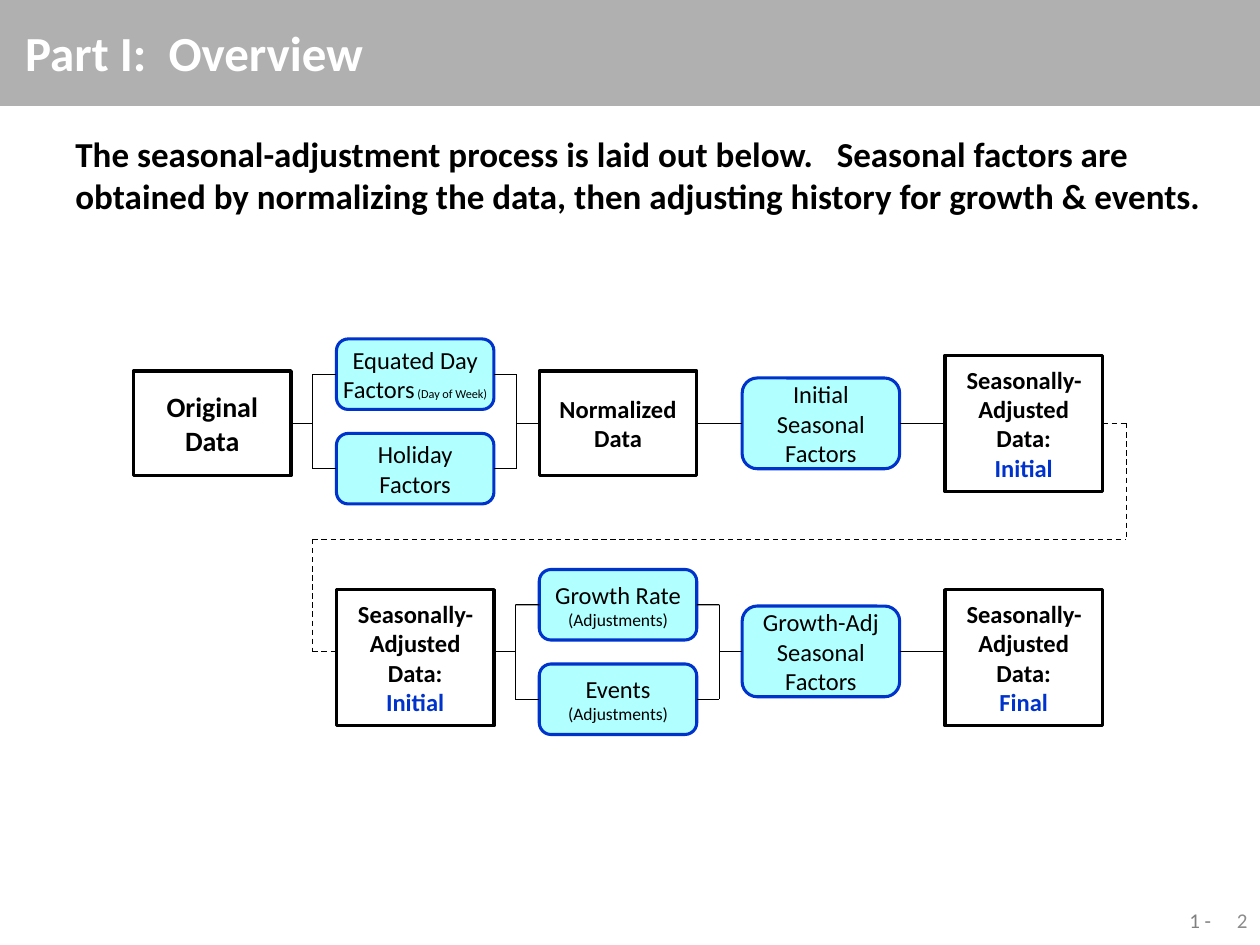
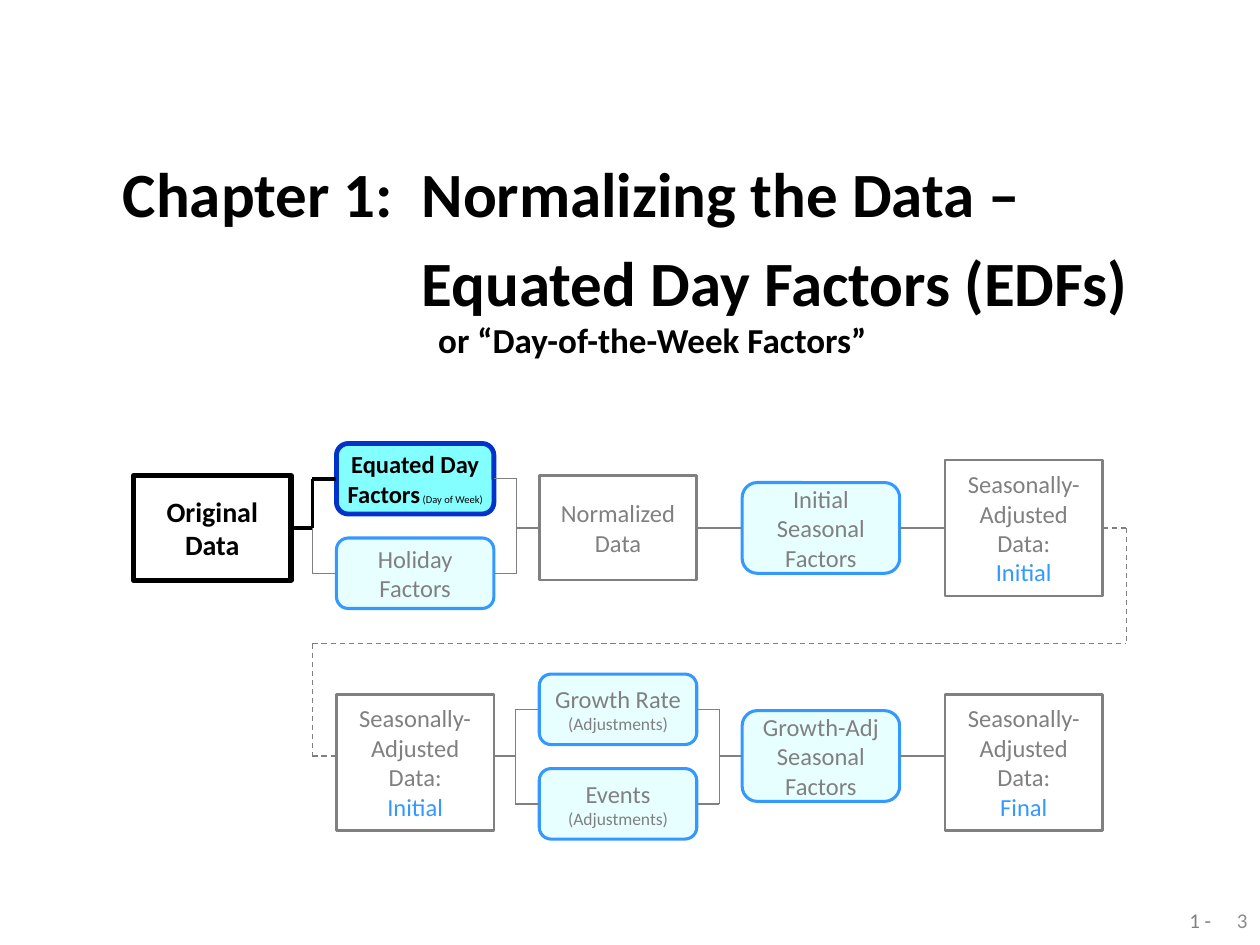
from dataclasses import dataclass
from typing import Union

from lxml.etree import SubElement
from pptx import Presentation
from pptx.dml.color import RGBColor
from pptx.enum.dml import MSO_LINE
from pptx.enum.shapes import MSO_CONNECTOR, MSO_SHAPE
from pptx.enum.text import MSO_ANCHOR, MSO_AUTO_SIZE, PP_ALIGN
from pptx.oxml.ns import qn
from pptx.util import Inches, Pt

COLORS = {
    "band": "969696",
    "white": "FFFFFF",
    "black": "000000",
    "muted": "808080",
    "number": "8C8C8C",
    "factor": "66FFFF",
    "blue": "0033CC",
    "pale_blue": "3399FF",
}
FONT = "Calibri"
TITLE_ONLY = 5
LEFT_SIDE, RIGHT_SIDE = 1, 3

BOX_WIDTH = 1.25
FIRST_COLUMN, COLUMN_STEP = 1.06, 1.61
TOP_ROW, BOTTOM_ROW, RETURN_ROW = 3.36, 5.17, 4.28
FINAL_ROW = 5.22
EQUATED_ROW, HOLIDAY_ROW = 2.97, 3.72
GROWTH_ROW, EVENTS_ROW = 4.8, 5.55
NORMALIZE_FORK, NORMALIZE_JOIN = 2.48, 4.1
ADJUST_FORK, ADJUST_JOIN = 4.09, 5.71
RETURN_EDGE = 8.94

Point = tuple[float, float]
Endpoint = Union[str, Point]


@dataclass(frozen=True)
class Look:
    ink: str
    accent: str
    opacity: int
    data_line: float
    factor_line: float
    wire_line: float
    data_bold: bool
    factor_bold: bool
    note_size: float


PLAIN = Look("black", "blue", 50, 2, 1.75, 0.75, True, False, 7)
FOCUSED = Look("black", "blue", 80, 3, 2.75, 2, True, True, 6)
MUTED = Look("muted", "pale_blue", 15, 1.5, 1.75, 0.75, False, False, 6)


@dataclass(frozen=True)
class Line:
    text: str
    size: float = 14
    accented: bool = False
    note: str = ""


@dataclass(frozen=True)
class Box:
    column: int
    middle: float
    height: float
    lines: tuple[Line, ...]
    factor: bool = False
    inset: float = 0.1
    on_path: bool = False

    @property
    def left(self) -> float:
        return FIRST_COLUMN + COLUMN_STEP * self.column

    @property
    def right(self) -> float:
        return self.left + BOX_WIDTH


@dataclass(frozen=True)
class Wire:
    begin: Endpoint
    end: Endpoint
    dashed: bool = False
    on_path: bool = False


def seasonal_lines(stage: str) -> tuple[Line, ...]:
    return Line("Seasonally-Adjusted Data:"), Line(stage, accented=True)


ADJUSTMENTS = Line("(Adjustments)", 10)
BOXES = {
    "original": Box(0, TOP_ROW, 0.83, (Line("Original Data", 16),), on_path=True),
    "equated": Box(1, EQUATED_ROW, 0.56,
                   (Line("Equated Day Factors", note=" (Day of Week)"),),
                   factor=True, inset=0, on_path=True),
    "holiday": Box(1, HOLIDAY_ROW, 0.56, (Line("Holiday Factors"),), factor=True),
    "normalized": Box(2, TOP_ROW, 0.83, (Line("Normalized Data"),)),
    "seasonal": Box(3, TOP_ROW, 0.72, (Line("Initial Seasonal Factors"),), factor=True),
    "initial": Box(4, TOP_ROW, 1.08, seasonal_lines("Initial")),
    "carried": Box(1, FINAL_ROW, 1.08, seasonal_lines("Initial")),
    "growth": Box(2, GROWTH_ROW, 0.56, (Line("Growth Rate"), ADJUSTMENTS),
                  factor=True, inset=0),
    "events": Box(2, EVENTS_ROW, 0.56, (Line("Events"), ADJUSTMENTS),
                  factor=True, inset=0),
    "growth_adjusted": Box(3, BOTTOM_ROW, 0.72,
                           (Line("Growth-Adj"), Line("Seasonal Factors")), factor=True),
    "final": Box(4, FINAL_ROW, 1.08, seasonal_lines("Final")),
}

WIRES = (
    Wire((NORMALIZE_FORK, TOP_ROW), (NORMALIZE_FORK, HOLIDAY_ROW)),
    Wire((NORMALIZE_FORK, HOLIDAY_ROW), "holiday"),
    Wire("original", (NORMALIZE_FORK, TOP_ROW), on_path=True),
    Wire((NORMALIZE_FORK, EQUATED_ROW), (NORMALIZE_FORK, TOP_ROW), on_path=True),
    Wire((NORMALIZE_FORK, EQUATED_ROW), "equated", on_path=True),
    Wire("equated", (NORMALIZE_JOIN, EQUATED_ROW)),
    Wire("holiday", (NORMALIZE_JOIN, HOLIDAY_ROW)),
    Wire((NORMALIZE_JOIN, EQUATED_ROW), (NORMALIZE_JOIN, HOLIDAY_ROW)),
    Wire((NORMALIZE_JOIN, TOP_ROW), "normalized"),
    Wire("normalized", "seasonal"),
    Wire("seasonal", "initial"),
    Wire("initial", (RETURN_EDGE, TOP_ROW), dashed=True),
    Wire((RETURN_EDGE, TOP_ROW), (RETURN_EDGE, RETURN_ROW), dashed=True),
    Wire((NORMALIZE_FORK, RETURN_ROW), (RETURN_EDGE, RETURN_ROW), dashed=True),
    Wire((NORMALIZE_FORK, RETURN_ROW), (NORMALIZE_FORK, BOTTOM_ROW), dashed=True),
    Wire((NORMALIZE_FORK, BOTTOM_ROW), (BOXES["carried"].left, BOTTOM_ROW), dashed=True),
    Wire((BOXES["carried"].right, BOTTOM_ROW), (ADJUST_FORK, BOTTOM_ROW)),
    Wire((ADJUST_FORK, GROWTH_ROW), (ADJUST_FORK, EVENTS_ROW)),
    Wire((ADJUST_FORK, GROWTH_ROW), "growth"),
    Wire((ADJUST_FORK, EVENTS_ROW), "events"),
    Wire("growth", (ADJUST_JOIN, GROWTH_ROW)),
    Wire("events", (ADJUST_JOIN, EVENTS_ROW)),
    Wire((ADJUST_JOIN, GROWTH_ROW), (ADJUST_JOIN, EVENTS_ROW)),
    Wire((ADJUST_JOIN, BOTTOM_ROW), "growth_adjusted"),
    Wire("growth_adjusted", (BOXES["final"].left, BOTTOM_ROW)),
)


def rgb(color: str) -> RGBColor:
    return RGBColor.from_string(COLORS[color])


def style_paragraph(paragraph, size: float, color: str, bold: bool = False,
                    align=PP_ALIGN.LEFT) -> None:
    paragraph.alignment = align
    font = paragraph.font
    font.name, font.size, font.bold = FONT, Pt(size), bold
    font.color.rgb = rgb(color)


def fill_solid(shape, color: str, opacity: int) -> None:
    shape.fill.solid()
    shape.fill.fore_color.rgb = rgb(color)
    tint = shape.fill._xPr.find(qn("a:solidFill"))[0]
    SubElement(tint, qn("a:alpha"), val=str(opacity * 1000))


def place(shape, left: float, top: float, width: float, height: float) -> None:
    shape.left, shape.top = Inches(left), Inches(top)
    shape.width, shape.height = Inches(width), Inches(height)


def add_text(slide, area: tuple[float, float, float, float], text: str, size: float,
             color: str = "black", bold: bool = False, align=PP_ALIGN.LEFT,
             anchor=MSO_ANCHOR.TOP, wrap: bool = True):
    frame = slide.shapes.add_textbox(*map(Inches, area)).text_frame
    frame.word_wrap = wrap
    frame.vertical_anchor = anchor
    frame.text = text
    style_paragraph(frame.paragraphs[0], size, color, bold, align)
    return frame


def set_title(slide, area: tuple[float, float, float, float], text: str, size: float,
              color: str, align):
    title = slide.shapes.title
    place(title, *area)
    frame = title.text_frame
    frame.text = text
    frame.auto_size = MSO_AUTO_SIZE.NONE
    frame.vertical_anchor = MSO_ANCHOR.MIDDLE
    style_paragraph(frame.paragraphs[0], size, color, True, align)
    return title


def add_footer(slide, number: int) -> None:
    add_text(slide, (7.67, 7.1, 2.33, 0.4), str(number), 12, "number",
             align=PP_ALIGN.RIGHT, anchor=MSO_ANCHOR.MIDDLE)
    chapter = add_text(slide, (9.34, 7.15, 0.38, 0.35), "1 -", 12, "muted",
                       anchor=MSO_ANCHOR.MIDDLE, wrap=False)
    chapter.margin_bottom = Inches(0.1)


def draw_box(slide, box: Box, look: Look, shift: float):
    kind = MSO_SHAPE.ROUNDED_RECTANGLE if box.factor else MSO_SHAPE.RECTANGLE
    top = box.middle - box.height / 2 + shift
    shape = slide.shapes.add_shape(
        kind, *map(Inches, (box.left, top, BOX_WIDTH, box.height)))
    shape.shadow.inherit = False
    if box.factor:
        fill_solid(shape, "factor", look.opacity)
    else:
        shape.fill.background()
    shape.line.color.rgb = rgb(look.accent if box.factor else look.ink)
    shape.line.width = Pt(look.factor_line if box.factor else look.data_line)

    frame = shape.text_frame
    frame.word_wrap = True
    frame.vertical_anchor = MSO_ANCHOR.MIDDLE
    frame.margin_left = frame.margin_right = Inches(box.inset)
    frame.margin_top = frame.margin_bottom = 0
    bold = look.factor_bold if box.factor else look.data_bold
    for index, line in enumerate(box.lines):
        paragraph = frame.add_paragraph() if index else frame.paragraphs[0]
        paragraph.add_run().text = line.text
        color = look.accent if line.accented else look.ink
        style_paragraph(paragraph, line.size, color, bold, PP_ALIGN.CENTER)
        if line.note:
            note = paragraph.add_run()
            note.text = line.note
            note.font.size, note.font.bold = Pt(look.note_size), False
    return shape


def locate(endpoint: Endpoint, side: int) -> Point:
    if isinstance(endpoint, str):
        box = BOXES[endpoint]
        return (box.left if side == LEFT_SIDE else box.right), box.middle
    return endpoint


def draw_wire(slide, wire: Wire, look: Look, shift: float, shapes: dict) -> None:
    x1, y1 = locate(wire.begin, RIGHT_SIDE)
    x2, y2 = locate(wire.end, LEFT_SIDE)
    link = slide.shapes.add_connector(
        MSO_CONNECTOR.STRAIGHT, *map(Inches, (x1, y1 + shift, x2, y2 + shift)))
    if isinstance(wire.begin, str):
        link.begin_connect(shapes[wire.begin], RIGHT_SIDE)
    if isinstance(wire.end, str):
        link.end_connect(shapes[wire.end], LEFT_SIDE)
    link.line.color.rgb = rgb(look.ink)
    link.line.width = Pt(look.wire_line)
    if wire.dashed:
        link.line.dash_style = MSO_LINE.DASH
    SubElement(link._element.spPr, qn("a:effectLst"))


def draw_process(slide, shift: float = 0, focus: bool = False) -> None:
    def look_of(item: Union[Box, Wire]) -> Look:
        if not focus:
            return PLAIN
        return FOCUSED if item.on_path else MUTED

    shapes = {key: draw_box(slide, box, look_of(box), shift) for key, box in BOXES.items()}
    for wire in WIRES:
        draw_wire(slide, wire, look_of(wire), shift, shapes)


def build_overview(slide) -> None:
    band = set_title(slide, (0, -0.02, 10, 0.86), "Part I:  Overview", 28, "white",
                     PP_ALIGN.LEFT)
    band.text_frame.margin_left = Inches(0.2)
    fill_solid(band, "band", 75)
    add_text(slide, (0.5, 1, 9.25, 0.77),
             "The seasonal-adjustment process is laid out below.   Seasonal factors are "
             "obtained by normalizing the data, then adjusting history for growth & events.",
             20, bold=True)
    draw_process(slide)
    add_footer(slide, 2)


def build_chapter(slide) -> None:
    set_title(slide, (0, 1.17, 9.08, 0.71), "Chapter 1:  Normalizing the Data –", 36,
              "black", PP_ALIGN.CENTER)
    topic = add_text(slide, (3.25, 1.88, 5.83, 1.04), "Equated Day Factors (EDFs)", 36,
                     bold=True)
    alias = topic.add_paragraph()
    alias.text = "or “Day-of-the-Week Factors”"
    style_paragraph(alias, 20, "black", True)
    alias._p.get_or_add_pPr().set("marL", str(Inches(0.13)))
    draw_process(slide, shift=0.83, focus=True)
    add_footer(slide, 3)


def main() -> None:
    deck = Presentation()
    deck.slide_width, deck.slide_height = Inches(10), Inches(7.5)
    for build in (build_overview, build_chapter):
        build(deck.slides.add_slide(deck.slide_layouts[TITLE_ONLY]))
    deck.save("out.pptx")


if __name__ == "__main__":
    main()
